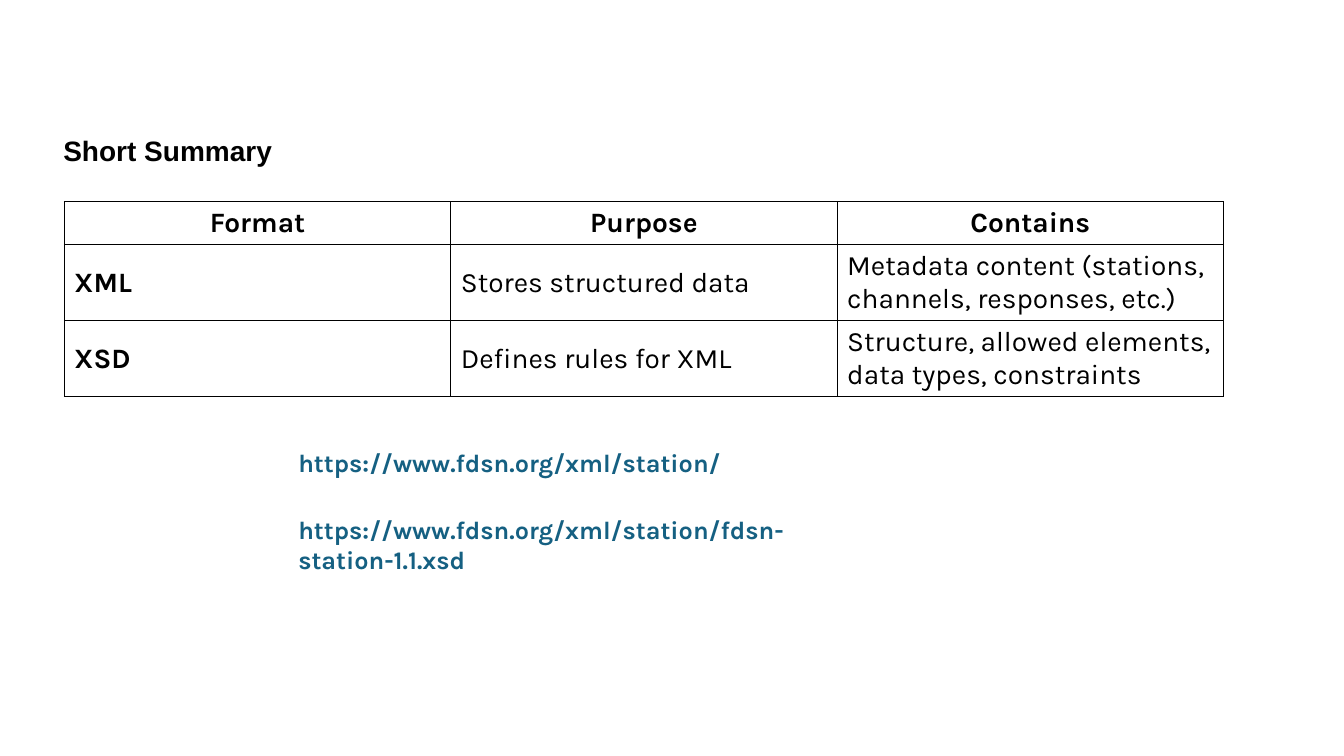
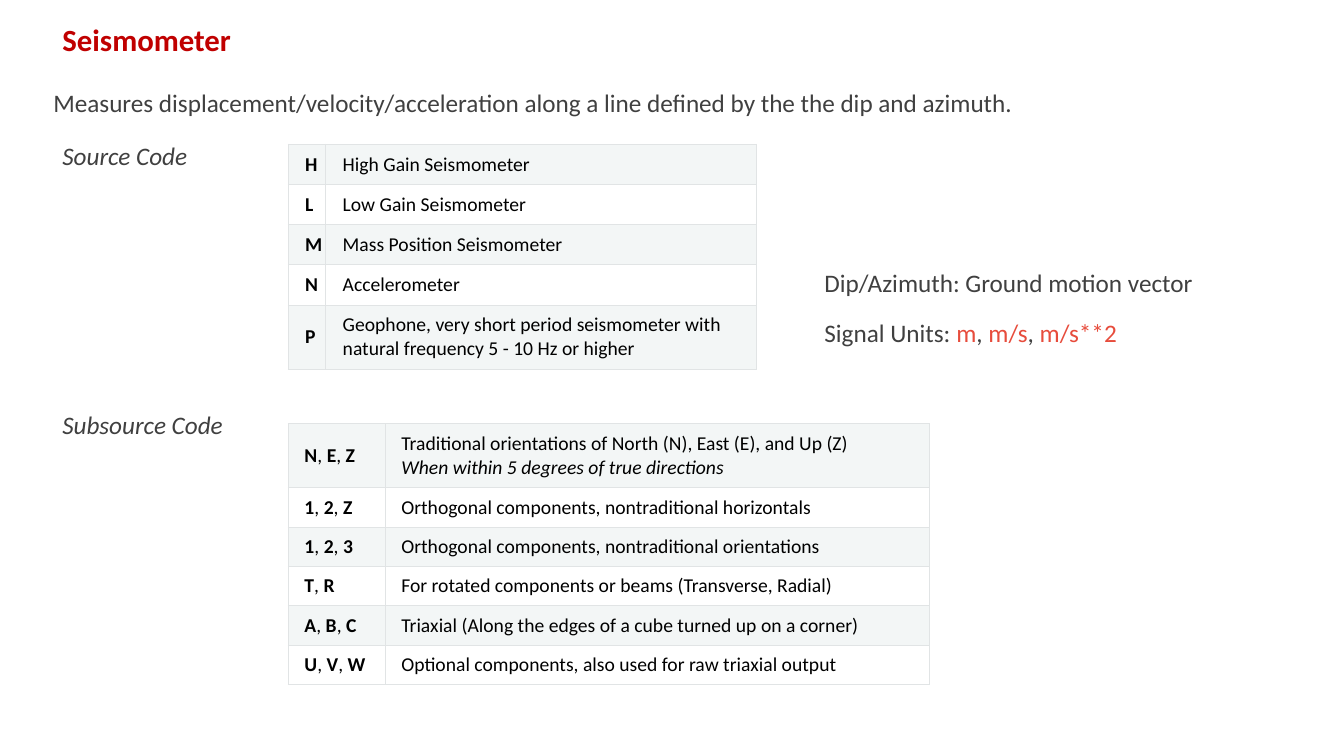
"""Build two slides: a format summary and a seismometer code reference."""
from dataclasses import dataclass, replace
from typing import Optional

from lxml import etree
from pptx import Presentation
from pptx.dml.color import RGBColor
from pptx.enum.text import MSO_ANCHOR, MSO_AUTO_SIZE, PP_ALIGN
from pptx.oxml.ns import qn
from pptx.slide import Slide
from pptx.table import _Cell
from pptx.text.text import TextFrame, _Paragraph
from pptx.util import Pt

TOP, MIDDLE = MSO_ANCHOR.TOP, MSO_ANCHOR.MIDDLE
LEFT, CENTER = PP_ALIGN.LEFT, PP_ALIGN.CENTER
FIXED_SIZE, GROW = MSO_AUTO_SIZE.NONE, MSO_AUTO_SIZE.SHAPE_TO_FIT_TEXT
TITLE_ONLY = 5


@dataclass(frozen=True)
class Theme:
    """Colours, fonts and type sizes of the deck."""
    black: str = "000000"
    white: str = "FFFFFF"
    body: str = "404040"
    heading: str = "C00000"
    link: str = "156082"
    unit: str = "E74C3C"
    band: str = "F3F6F6"
    rule: str = "E1E4E5"
    title_font: str = "Arial"
    summary_font: str = "Karla"
    code_font: str = "Calibri"
    heading_size: float = 22
    summary_size: float = 20
    body_size: float = 18
    code_size: float = 14


THEME = Theme()


@dataclass(frozen=True)
class Style:
    """Character formatting."""
    font: str
    size: float
    color: str
    bold: bool = False
    italic: bool = False


@dataclass(frozen=True)
class Span:
    """A stretch of text that may differ from its base style."""
    text: str
    bold: Optional[bool] = None
    italic: Optional[bool] = None
    color: Optional[str] = None


@dataclass(frozen=True)
class Box:
    """A rectangle in points."""
    left: float
    top: float
    width: float
    height: float


@dataclass(frozen=True)
class Spacing:
    """Paragraph spacing in points."""
    line: Optional[float] = None
    after: float = 0


@dataclass(frozen=True)
class Grid:
    """Placement and look of a table."""
    left: float
    top: float
    columns: tuple[float, ...]
    rows: tuple[float, ...]
    style: Style
    border: str
    border_width: float
    inset_x: float = 7.2
    inset_y: float = 3.6
    banded: bool = False
    header: bool = False


Line = list[Span]
Lines = list[Line]

TITLE = Style(THEME.title_font, THEME.summary_size, THEME.black, bold=True)
HEADING = Style(THEME.code_font, THEME.heading_size, THEME.heading, bold=True)
SUMMARY = Style(THEME.summary_font, THEME.summary_size, THEME.black)
LINK = Style(THEME.summary_font, THEME.body_size, THEME.link, bold=True)
BODY = Style(THEME.code_font, THEME.body_size, THEME.body)
LABEL = replace(BODY, italic=True)
CODE = Style(THEME.code_font, THEME.code_size, THEME.black)

FORMATS = [
    ("Format", "Purpose", "Contains"),
    ("XML", "Stores structured data",
     "Metadata content (stations, channels, responses, etc.)"),
    ("XSD", "Defines rules for XML",
     "Structure, allowed elements, data types, constraints"),
]
SCHEMA_LINKS = [
    (316, "https://www.fdsn.org/xml/station/"),
    (363.6, "https://www.fdsn.org/xml/station/fdsn-station-1.1.xsd"),
]
SOURCE_CODES = [
    ("H", "High Gain Seismometer"),
    ("L", "Low Gain Seismometer"),
    ("M", "Mass Position Seismometer"),
    ("N", "Accelerometer"),
    ("P", "Geophone, very short period seismometer with natural frequency "
          "5 - 10 Hz or higher"),
]
SUBSOURCE_CODES = [
    ("N, E, Z", "Traditional orientations of North (N), East (E), and Up (Z)",
     "When within 5 degrees of true directions"),
    ("1, 2, Z", "Orthogonal components, nontraditional horizontals"),
    ("1, 2, 3", "Orthogonal components, nontraditional orientations"),
    ("T, R", "For rotated components or beams (Transverse, Radial)"),
    ("A, B, C", "Triaxial (Along the edges of a cube turned up on a corner)"),
    ("U, V, W", "Optional components, also used for raw triaxial output"),
]
SIGNAL_UNITS = ("m", "m/s", "m/s**2")

CODE_LEFT = 206
LABEL_LEFT = 37.4
FORMAT_GRID = Grid(46, 144.2, (276,) * 3, (30.2, 54.3, 54.3), SUMMARY,
                   THEME.black, 1, header=True)
SOURCE_GRID = Grid(CODE_LEFT, 103, (26, 307.4), (28.75,) * 4 + (45.7,), CODE,
                   THEME.rule, 0.75, 12, 5.8, banded=True)
SUBSOURCE_GRID = Grid(CODE_LEFT, 302.6, (69.2, 388.8), (45.7,) + (28.2,) * 5, CODE,
                      THEME.rule, 0.75, 11.5, 5.5, banded=True)


def separated(items: tuple[str, ...], model: Span) -> Line:
    """Style each item like the model and put plain commas between them."""
    spans: Line = []
    for item in items:
        if spans:
            spans.append(Span(", "))
        spans.append(replace(model, text=item))
    return spans


def write_paragraph(paragraph: _Paragraph, line: Line, style: Style) -> None:
    """Write the spans of one line as formatted runs."""
    for span in line:
        run = paragraph.add_run()
        run.text = span.text
        font = run.font
        font.name = style.font
        font.size = Pt(style.size)
        font.bold = style.bold if span.bold is None else span.bold
        font.italic = style.italic if span.italic is None else span.italic
        font.color.rgb = RGBColor.from_string(span.color or style.color)


def write_lines(frame: TextFrame, lines: Lines, style: Style,
                align: PP_ALIGN = LEFT, spacing: Spacing = Spacing()) -> None:
    """Fill a text frame with one paragraph per line."""
    for index, line in enumerate(lines):
        paragraph = frame.add_paragraph() if index else frame.paragraphs[0]
        paragraph.alignment = align
        paragraph.space_after = Pt(spacing.after)
        if spacing.line:
            paragraph.line_spacing = Pt(spacing.line)
        write_paragraph(paragraph, line, style)


def add_text(slide: Slide, box: Box, lines: Lines, style: Style,
             spacing: Spacing = Spacing()) -> None:
    """Add a wrapping text box."""
    frame = slide.shapes.add_textbox(
        Pt(box.left), Pt(box.top), Pt(box.width), Pt(box.height)).text_frame
    frame.word_wrap = True
    frame.auto_size = GROW
    write_lines(frame, lines, style, spacing=spacing)


def set_title(slide: Slide, text: str, box: Box, style: Style) -> None:
    """Place and format the title placeholder."""
    title = slide.shapes.title
    title.left, title.top = Pt(box.left), Pt(box.top)
    title.width, title.height = Pt(box.width), Pt(box.height)
    frame = title.text_frame
    frame.auto_size = FIXED_SIZE
    frame.vertical_anchor = TOP
    write_lines(frame, [[Span(text)]], style)


def set_borders(cell: _Cell, color: str, width: float) -> None:
    """Draw a solid line on all four sides of a cell."""
    properties = cell._tc.get_or_add_tcPr()
    for side in ("a:lnL", "a:lnR", "a:lnT", "a:lnB"):
        edge = etree.SubElement(properties, qn(side), w=str(int(Pt(width))))
        fill = etree.SubElement(edge, qn("a:solidFill"))
        etree.SubElement(fill, qn("a:srgbClr"), val=color)


def add_grid(slide: Slide, grid: Grid, contents: list[list[Lines]]) -> None:
    """Add a bordered table, optionally banded or with a centred header."""
    table = slide.shapes.add_table(
        len(grid.rows), len(grid.columns), Pt(grid.left), Pt(grid.top),
        Pt(sum(grid.columns)), Pt(sum(grid.rows))).table
    table.first_row = grid.header
    table.horz_banding = False
    for column, width in zip(table.columns, grid.columns):
        column.width = Pt(width)
    for row_index, (row, height) in enumerate(zip(table.rows, grid.rows)):
        row.height = Pt(height)
        is_header = grid.header and row_index == 0
        for cell, lines in zip(row.cells, contents[row_index]):
            cell.margin_left = cell.margin_right = Pt(grid.inset_x)
            cell.margin_top = cell.margin_bottom = Pt(grid.inset_y)
            cell.vertical_anchor = MIDDLE
            set_borders(cell, grid.border, grid.border_width)
            shaded = grid.banded and row_index % 2 == 0
            cell.fill.solid()
            cell.fill.fore_color.rgb = RGBColor.from_string(
                THEME.band if shaded else THEME.white)
            write_lines(cell.text_frame, lines, grid.style,
                        CENTER if is_header else LEFT)


def code_contents(codes: list[tuple[str, ...]]) -> list[list[Lines]]:
    """Pair bold codes with their meaning and an optional italic remark."""
    return [
        [[separated(tuple(code.split(", ")), Span("", bold=True))],
         [[Span(meaning)]] + [[Span(remark, italic=True)] for remark in remarks]]
        for code, meaning, *remarks in codes
    ]


def build_summary(slide: Slide) -> None:
    """Build the slide that compares the two formats."""
    set_title(slide, "Short Summary", Box(38, 92, 880, 32), TITLE)
    contents = [
        [[[Span(text, bold=row == 0 or column == 0)]]
         for column, text in enumerate(texts)]
        for row, texts in enumerate(FORMATS)
    ]
    add_grid(slide, FORMAT_GRID, contents)
    for top, address in SCHEMA_LINKS:
        add_text(slide, Box(CODE_LEFT, top, 480, 29), [[Span(address)]], LINK)


def build_seismometer(slide: Slide) -> None:
    """Build the slide that lists the seismometer codes."""
    set_title(slide, "Seismometer", Box(LABEL_LEFT, 11, 480, 34), HEADING)
    add_text(slide, Box(31, 59, 784, 29), [[Span(
        "Measures displacement/velocity/acceleration along a line defined by "
        "the the dip and azimuth.")]], BODY)
    for label, top, grid, codes in (
            ("Source Code", 96.5, SOURCE_GRID, SOURCE_CODES),
            ("Subsource Code", 288.7, SUBSOURCE_GRID, SUBSOURCE_CODES)):
        add_text(slide, Box(LABEL_LEFT, top, 146, 29), [[Span(label)]], LABEL)
        add_grid(slide, grid, code_contents(codes))
    units = separated(SIGNAL_UNITS, Span("", color=THEME.unit))
    add_text(slide, Box(581.8, 190.8, 319, 62.6),
             [[Span("Dip/Azimuth: Ground motion vector")],
              [Span("Signal Units: "), *units]],
             BODY, Spacing(line=18, after=18))


def main() -> None:
    """Build and save the deck."""
    deck = Presentation()
    deck.slide_width, deck.slide_height = Pt(960), Pt(540)
    for build in (build_summary, build_seismometer):
        build(deck.slides.add_slide(deck.slide_layouts[TITLE_ONLY]))
    deck.save("out.pptx")


if __name__ == "__main__":
    main()
